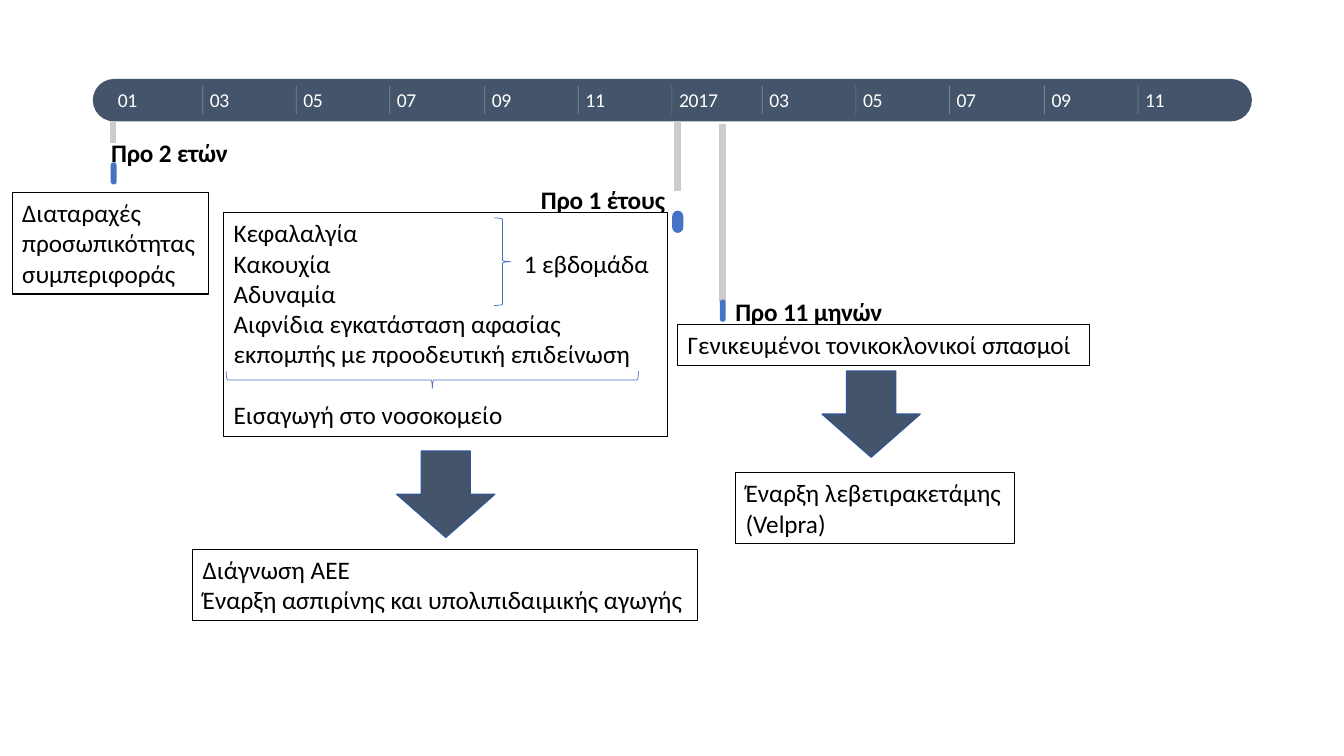
from dataclasses import dataclass
from itertools import accumulate

from lxml import etree
from pptx import Presentation
from pptx import util as u
from pptx.dml.color import RGBColor
from pptx.enum import shapes, text
from pptx.oxml import ns

FONT = "Calibri"
NAVY, BLUE, ARROW_EDGE = "44546A", "4472C4", "325491"
BLACK, WHITE, STEM = "000000", "FFFFFF", "CCCCCC"
SHAPE = shapes.MSO_SHAPE

MONTHS = ["01", "03", "05", "07", "09", "11", "2017", "03", "05", "07", "09", "11"]
DAYS = [60, 61, 61, 62, 61, 61, 59, 61, 61, 62, 61]  # days between month labels
AXIS_LEFT, AXIS_RIGHT = 2.79, 28.68


@dataclass
class Box:
    """A rectangle in centimetres."""
    left: float
    top: float
    width: float
    height: float

    def lengths(self) -> list[u.Length]:
        return [u.Cm(v) for v in (self.left, self.top, self.width, self.height)]


@dataclass
class Note:
    box: Box
    lines: list[str]
    wrap: bool = False


@dataclass
class Event:
    label: str
    label_box: Box
    stem: tuple[float, float, float]  # x, top, bottom
    pill: Box
    note: Note


@dataclass
class Outcome:
    arrow: Box
    note: Note


EVENTS = [
    Event("Προ 2 ετών", Box(2.8, 3.45, 3.18, 0.76), (2.84, 3.05, 3.61),
          Box(2.79, 4.09, 0.15, 0.56),
          Note(Box(0.31, 4.85, 4.95, 2.56),
               ["Διαταραχές προσωπικότητας συμπεριφοράς"], True)),
    Event("Προ 1 έτους", Box(13.63, 4.65, 3.43, 0.76), (17.07, 3.05, 4.82),
          Box(16.94, 5.31, 0.28, 0.56),
          Note(Box(5.64, 5.36, 11.18, 5.64),
               ["Κεφαλαλγία", "Κακουχία\t1 εβδομάδα", "Αδυναμία",
                "Αιφνίδια εγκατάσταση αφασίας εκπομπής με προοδευτική επιδείνωση",
                "Εισαγωγή στο νοσοκομείο"], True)),
    Event("Προ 11 μηνών", Box(18.53, 7.47, 3.96, 0.76), (18.21, 3.12, 7.62),
          Box(18.14, 7.55, 0.15, 0.56),
          Note(Box(17.08, 8.18, 10.39, 1.03),
               ["Γενικευμένοι τονικοκλονικοί σπασμοί"])),
]

OUTCOMES = [
    Outcome(Box(10, 11.37, 2.47, 2.17),
            Note(Box(4.86, 13.84, 12.73, 1.8),
                 ["Διάγνωση ΑΕΕ", "Έναρξη ασπιρίνης και υπολιπιδαιμικής αγωγής"])),
    Outcome(Box(20.72, 9.35, 2.47, 2.17),
            Note(Box(18.54, 11.91, 7.04, 1.79),
                 ["Έναρξη λεβετιρακετάμης", "(Velpra)"])),
]


def paint(fmt, colour: str) -> None:
    """Give a fill a solid colour."""
    fmt.solid()
    fmt.fore_color.rgb = RGBColor.from_string(colour)


def add_preset(s, kind, box: Box, fill: str = "", line: str = "", width: float = 1):
    sp = s.shapes.add_shape(kind, *box.lengths())
    sp.shadow.inherit = False
    if fill:
        paint(sp.fill, fill)
    else:
        sp.fill.background()
    if line:
        paint(sp.line.fill, line)
        sp.line.width = u.Pt(width)
    else:
        sp.line.fill.background()
    return sp


def add_pill(s, box: Box, fill: str) -> None:
    add_preset(s, SHAPE.ROUNDED_RECTANGLE, box, fill).adjustments[0] = 0.5


def add_vertical(s, x: float, top: float, bottom: float, colour: str, width: float):
    c = s.shapes.add_connector(shapes.MSO_CONNECTOR.STRAIGHT,
                               u.Cm(x), u.Cm(top), u.Cm(x), u.Cm(bottom))
    paint(c.line.fill, colour)
    c.line.width = u.Pt(width)
    etree.SubElement(c.element.spPr, ns.qn("a:effectLst"))
    return c


def style(p, size: float, colour: str, bold: bool = False) -> None:
    p.font.name = FONT
    p.font.size = u.Pt(size)
    p.font.bold = bold
    paint(p.font.fill, colour)


def add_label(s, box: Box, words: str, size: float, colour: str, spacing: int,
              bold: bool = False) -> None:
    """Add a caption without margins; spacing is in hundredths of a point."""
    tf = s.shapes.add_textbox(*box.lengths()).text_frame
    tf.margin_left = tf.margin_top = tf.margin_right = tf.margin_bottom = 0
    tf.vertical_anchor = text.MSO_ANCHOR.MIDDLE
    tf.word_wrap = True
    p = tf.paragraphs[0]
    r = p.add_run()
    r.text = words
    r.font._element.set("spc", str(spacing))
    style(p, size, colour, bold)


def add_tab(p, position: float) -> None:
    tabs = etree.SubElement(p._p.get_or_add_pPr(), ns.qn("a:tabLst"))
    etree.SubElement(tabs, ns.qn("a:tab"), pos=str(u.Cm(position)), algn="l")


def add_note(s, note: Note):
    sp = s.shapes.add_textbox(*note.box.lengths())
    paint(sp.line.fill, BLACK)
    sp.line.width = u.Pt(0.75)
    tf = sp.text_frame
    tf.word_wrap = note.wrap
    tf.auto_size = text.MSO_AUTO_SIZE.SHAPE_TO_FIT_TEXT
    for i, line in enumerate(note.lines):
        p = tf.paragraphs[0] if i == 0 else tf.add_paragraph()
        if "\t" in line:
            add_tab(p, 7.31)
        p.add_run().text = line
        style(p, 18, BLACK)
    return sp


def add_axis(s) -> None:
    add_pill(s, Box(2.34, 1.99, 29.21, 1.07), NAVY)
    scale = (AXIS_RIGHT - AXIS_LEFT) / sum(DAYS)
    for month, day in zip(MONTHS, accumulate(DAYS, initial=0)):
        x = AXIS_LEFT + day * scale
        if day:
            tick = add_vertical(s, x, 2.16, 2.87, WHITE, 0.5)
            colour = tick.line.fill._xPr.find(".//" + ns.qn("a:srgbClr"))
            etree.SubElement(colour, ns.qn("a:alpha"), val="30000")
        add_label(s, Box(x + 0.18, 2.26, 0.28 * len(month), 0.51),
                  month, 14, WHITE, -20 if len(month) > 2 else -30)


def add_event(s, event: Event):
    add_vertical(s, *event.stem, STEM, 4.5)
    add_pill(s, event.pill, BLUE)
    add_label(s, event.label_box, event.label, 18, BLACK, -10, bold=True)
    return add_note(s, event.note)


def main() -> None:
    prs = Presentation()
    prs.slide_width, prs.slide_height = u.Cm(33.87), u.Cm(19.05)
    s = prs.slides.add_slide(prs.slide_layouts[6])

    add_axis(s)
    notes = [add_event(s, event) for event in EVENTS]
    # Room for the lower brace above the hospital admission
    notes[1].text_frame.paragraphs[-1].space_before = u.Pt(22)

    add_preset(s, SHAPE.RIGHT_BRACE, Box(12.45, 5.49, 0.43, 2.21), line=BLUE, width=0.5)
    symptoms = add_preset(s, SHAPE.RIGHT_BRACE, Box(10.68, 4.38, 0.43, 10.39),
                          line=BLUE, width=0.5)
    symptoms.rotation = 90

    for outcome in OUTCOMES:
        add_preset(s, SHAPE.DOWN_ARROW, outcome.arrow, NAVY, ARROW_EDGE)
        add_note(s, outcome.note)
    prs.save("out.pptx")


if __name__ == "__main__":
    main()
